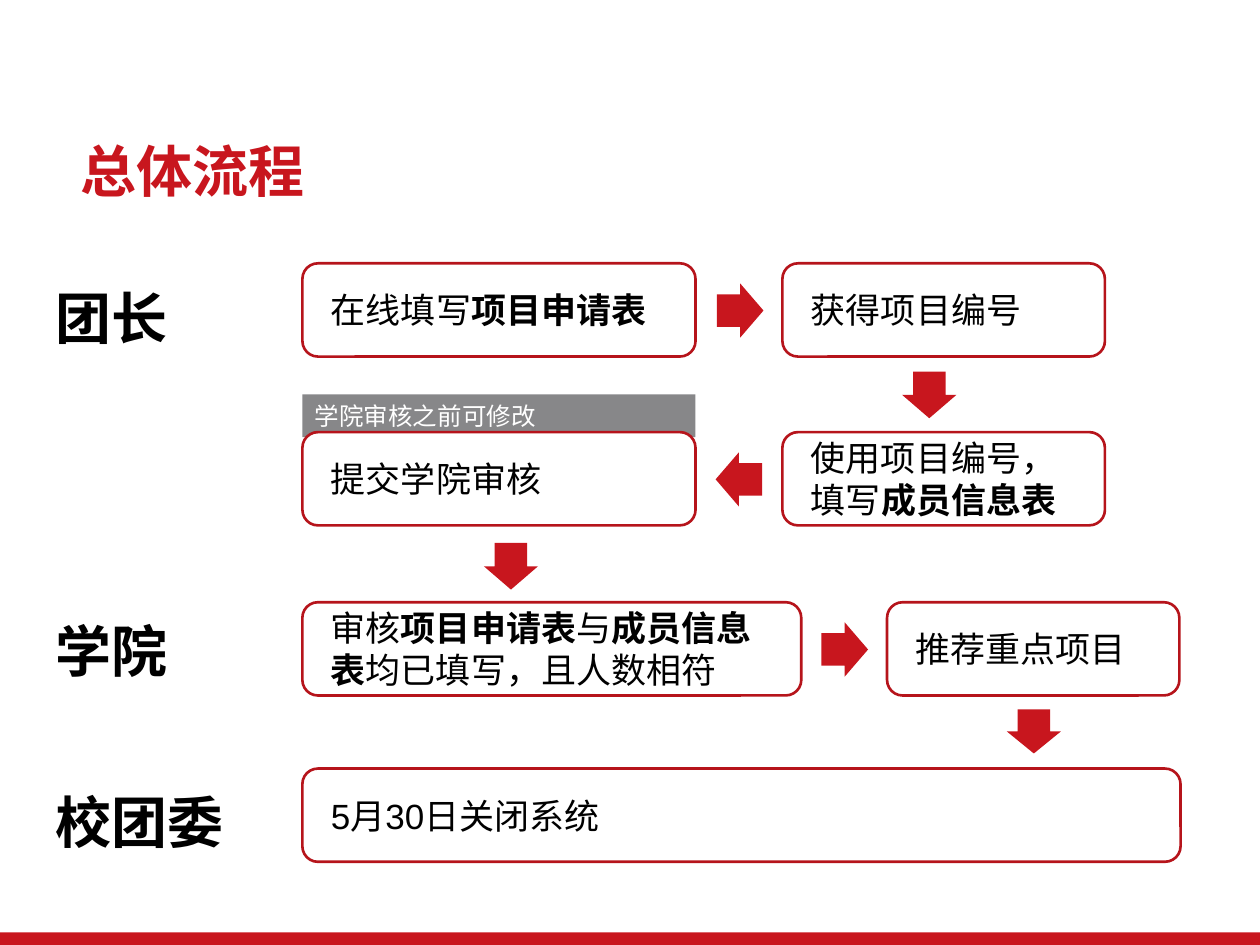
"""Build the overall application process slide."""
from dataclasses import dataclass

from pptx import Presentation
from pptx.dml.color import RGBColor as RGB
from pptx.enum.shapes import MSO_SHAPE as SHAPE
from pptx.enum.text import MSO_ANCHOR as ANCHOR, MSO_AUTO_SIZE as AUTO, PP_ALIGN as ALIGN
from pptx.util import Inches, Pt


@dataclass(frozen=True)
class Theme:
    red: RGB = RGB(0xC8, 0x16, 0x1E)
    border: RGB = RGB(0xB6, 0x14, 0x1B)
    gray: RGB = RGB(0x87, 0x87, 0x89)
    white: RGB = RGB(0xFF, 0xFF, 0xFF)
    black: RGB = RGB(0, 0, 0)
    font: str = "Arial"
    title_font: str = "Noto Sans CJK SC"
    heading: Pt = Pt(32)
    body: Pt = Pt(20)
    note: Pt = Pt(14)


T = Theme()


def add_box(kind, x, y, w, h, fill, line=None):
    sp = s.shapes.add_shape(kind, Inches(x), Inches(y), Inches(w), Inches(h))
    sp.shadow.inherit = False
    sp.fill.solid()
    sp.fill.fore_color.rgb = fill
    if line is None:
        sp.line.fill.background()
    else:
        sp.line.color.rgb = line
        sp.line.width = Pt(1.5)
    return sp


def style(p, size, color, bold=None, font=T.font):
    p.alignment = ALIGN.LEFT
    p.font.name = font
    p.font.size = size
    p.font.color.rgb = color
    p.font.bold = bold


prs = Presentation()
prs.slide_width, prs.slide_height = Inches(10), Inches(7.5)
s = prs.slides.add_slide(prs.slide_layouts[5])

add_box(SHAPE.RECTANGLE, 0, 7.4, 10, 0.1, T.red)

title = s.shapes.title
title.left, title.top, title.width, title.height = map(Inches, (0.54, 1.07, 9.16, 0.63))
title.text_frame.text = "总体流程"
p = title.text_frame.paragraphs[0]
p.line_spacing = 0.9
style(p, T.heading, T.red, True, T.title_font)

note = add_box(SHAPE.RECTANGLE, 2.4, 3.13, 3.12, 0.34, T.gray)
tf = note.text_frame
tf.vertical_anchor = ANCHOR.TOP
tf.text = "学院审核之前可修改"
style(tf.paragraphs[0], T.note, T.white)

for name, y, w in [("团长", 2.2, 1.1), ("学院", 4.84, 1.1), ("校团委", 6.2, 1.55)]:
    sp = s.shapes.add_textbox(Inches(0.34), Inches(y), Inches(w), Inches(0.64))
    tf = sp.text_frame
    tf.word_wrap = False
    tf.auto_size = AUTO.SHAPE_TO_FIT_TEXT
    tf.text = name
    style(tf.paragraphs[0], T.heading, T.black, True)

form, members = ("项目申请表", True), ("成员信息表", True)
steps = [
    (2.4, 2.09, 3.12, [("在线填写", False), form]),
    (6.21, 2.09, 2.56, [("获得项目编号", False)]),
    (6.21, 3.43, 2.56, [("使用项目编号，填写", False), members]),
    (2.4, 3.43, 3.12, [("提交学院审核", False)]),
    (2.4, 4.78, 3.96, [("审核", False), form, ("与", False), members,
                       ("均已填写，且人数相符", False)]),
    (7.04, 4.78, 2.32, [("推荐重点项目", False)]),
    (2.4, 6.1, 6.97, [("5月30日关闭系统", False)]),
]
for x, y, w, runs in steps:
    tf = add_box(SHAPE.ROUNDED_RECTANGLE, x, y, w, 0.74, T.white, T.border).text_frame
    tf.word_wrap = True
    tf.vertical_anchor = ANCHOR.MIDDLE
    tf.margin_left = tf.margin_right = tf.margin_top = tf.margin_bottom = Inches(0.19)
    p = tf.paragraphs[0]
    p.space_after = Pt(7)
    style(p, T.body, T.black)
    for text, bold in runs:
        r = p.add_run()
        r.text = text
        r.font.bold = bold

outline = [(0, 0.2), (0.5, 0.2), (0.5, 0), (1, 0.5), (0.5, 1), (0.5, 0.8), (0, 0.8)]
arrows = [
    (5.69, 2.25, 0.37, "right"),
    (7.19, 2.92, 0.37, "down"),
    (5.68, 3.59, 0.37, "left"),
    (3.87, 4.28, 0.37, "down"),
    (6.52, 4.94, 0.37, "right"),
    (8.03, 5.59, 0.35, "down"),
]
for x, y, w, way in arrows:
    points = [(Inches(x + w * (1 - u if way == "left" else u)), Inches(y + 0.43 * v))
              for u, v in outline]
    builder = s.shapes.build_freeform(*points[0])
    builder.add_line_segments(points[1:], close=True)
    sp = builder.convert_to_shape()
    sp.shadow.inherit = False
    sp.fill.solid()
    sp.fill.fore_color.rgb = T.red
    sp.line.fill.background()
    sp.rotation = 90 if way == "down" else 0

prs.save("out.pptx")
